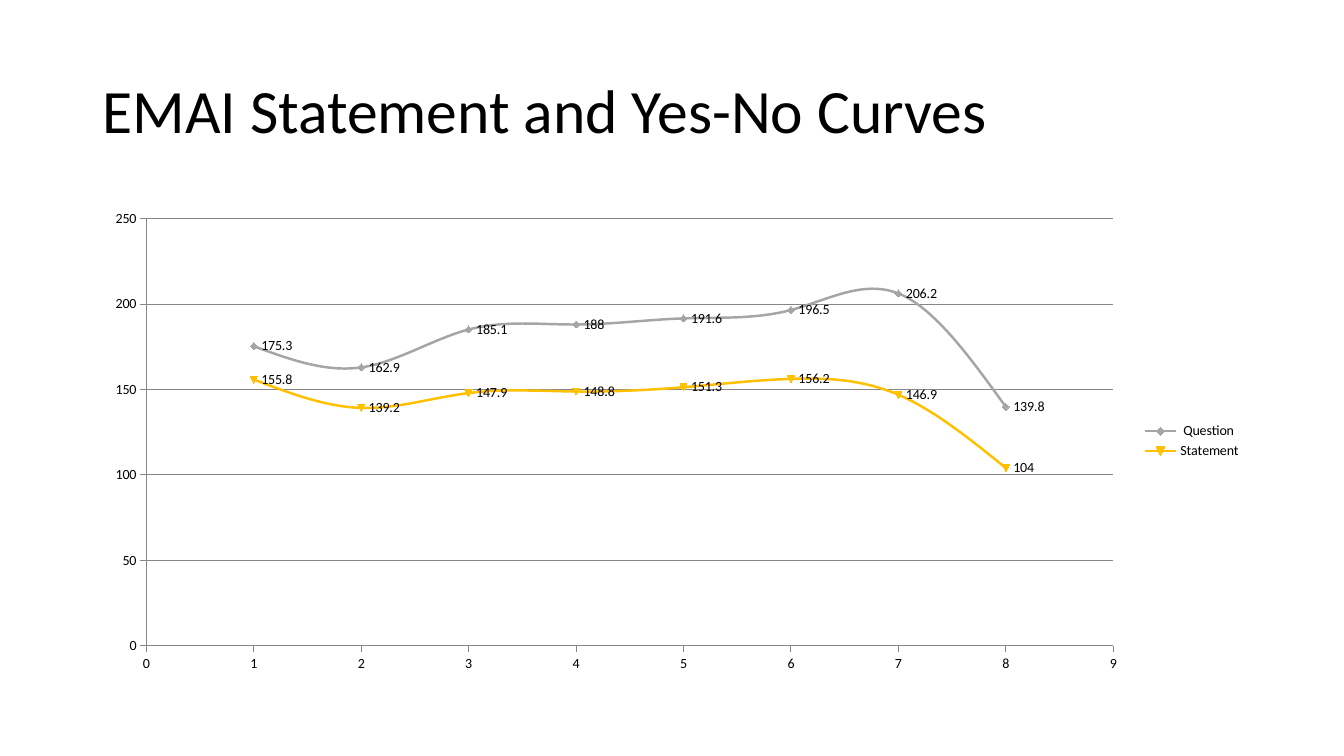
"""Build a slide that charts statement and yes-no question curves."""
from pptx import Presentation
from pptx import util as u
from pptx.chart.data import XyChartData
from pptx.chart.datalabel import DataLabels
from pptx.dml.color import RGBColor
from pptx.enum import chart as ch, text

TITLE = "EMAI Statement and Yes-No Curves"
CURVES = [
    (" Question", "A5A5A5", [175.3, 162.9, 185.1, 188, 191.6, 196.5, 206.2, 139.8]),
    ("Statement", "FFC000", [155.8, 139.2, 147.9, 148.8, 151.3, 156.2, 146.9, 104]),
]
THEME = {"font": "Calibri", "ink": "000000", "axis": "868686",
         "title": 44, "label": 10, "curve": 1.75, "rule": 0.75}
LEFT, WIDE = u.Cm(2.33), u.Cm(29.21)


def style(font, size):
    font.name = THEME["font"]
    font.size = u.Pt(size)
    font.color.rgb = RGBColor.from_string(THEME["ink"])


def stroke(line, color, width):
    line.color.rgb = RGBColor.from_string(color)
    line.width = u.Pt(width)


def add_title(slide):
    frame = slide.shapes.add_textbox(LEFT, u.Cm(1.01), WIDE, u.Cm(3.68)).text_frame
    frame.word_wrap = True
    frame.vertical_anchor = text.MSO_ANCHOR.MIDDLE
    frame.text = TITLE
    line = frame.paragraphs[0]
    line.line_spacing = 0.9
    style(line.runs[0].font, THEME["title"])


def add_curves(slide):
    data = XyChartData()
    for name, color, vals in CURVES:
        curve = data.add_series(name)
        for x, y in enumerate(vals, 1):
            curve.add_data_point(x, y)
    chart = slide.shapes.add_chart(ch.XL_CHART_TYPE.XY_SCATTER_SMOOTH, LEFT,
                                   u.Cm(5.07), WIDE, u.Cm(12.09), data).chart
    style(chart.font, THEME["label"])
    chart.has_title = False
    chart.has_legend = True
    chart.legend.position = ch.XL_LEGEND_POSITION.RIGHT
    chart.legend.include_in_layout = False

    tops = [(chart.category_axis, 9, 1), (chart.value_axis, 250, 50)]
    for axis, top, step in tops:
        axis.minimum_scale, axis.maximum_scale = 0, top
        axis.major_unit = step
        axis.major_tick_mark = ch.XL_TICK_MARK.OUTSIDE
        axis.minor_tick_mark = ch.XL_TICK_MARK.NONE
        axis.has_major_gridlines = False
        stroke(axis.format.line, THEME["axis"], THEME["rule"])
    chart.value_axis.has_major_gridlines = True
    grid = chart.value_axis.major_gridlines
    stroke(grid.format.line, THEME["axis"], THEME["rule"])

    plot = chart.plots[0]
    plot.vary_by_categories = False
    for curve, (name, color, vals) in zip(plot.series, CURVES):
        curve._element.get_or_add_smooth().val = True
        stroke(curve.format.line, color, THEME["curve"])
        labels = DataLabels(curve._element.get_or_add_dLbls())
        labels.show_value = True
        labels.position = ch.XL_LABEL_POSITION.RIGHT
        style(labels.font, THEME["label"])


def main():
    deck = Presentation()
    deck.slide_width, deck.slide_height = u.Cm(33.87), u.Cm(19.05)
    slide = deck.slides.add_slide(deck.slide_layouts[6])
    add_title(slide)
    add_curves(slide)
    deck.save("out.pptx")


if __name__ == "__main__":
    main()
